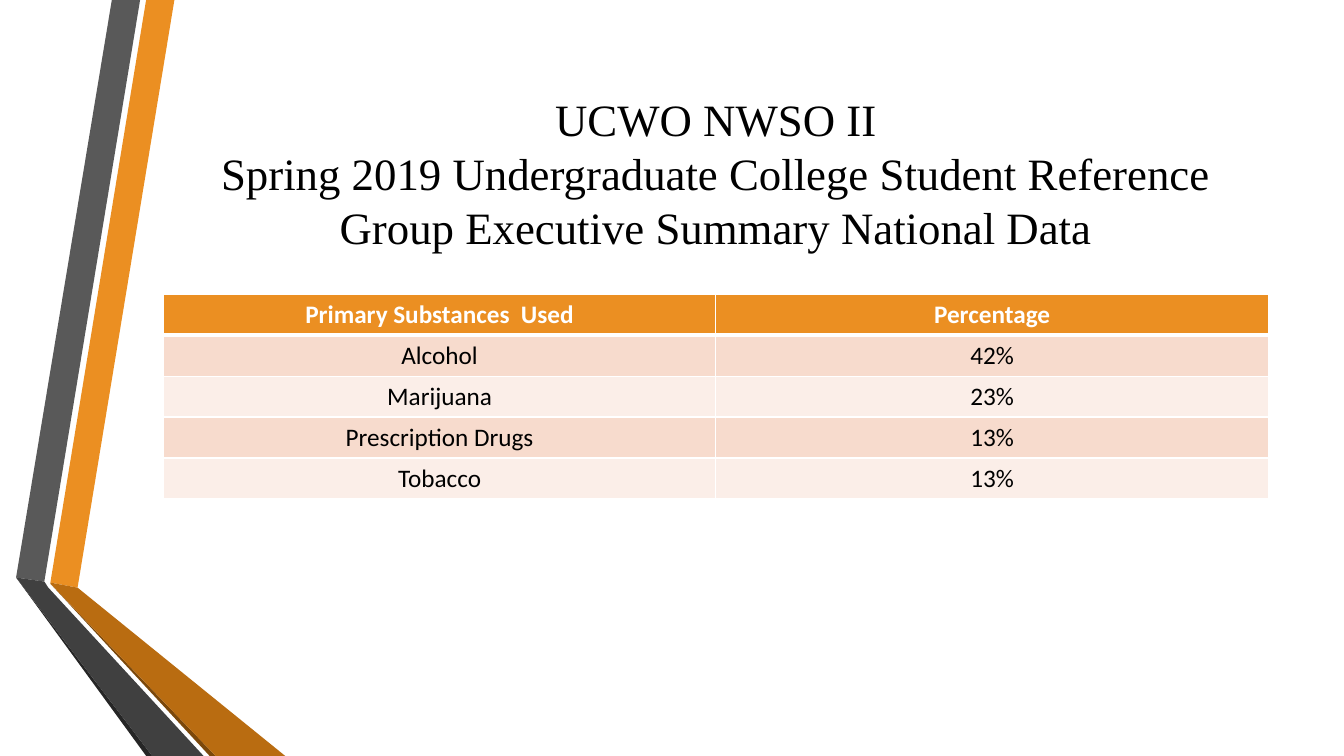
import dataclasses

import pptx
import pptx.dml.color
import pptx.enum.text
import pptx.oxml
import pptx.oxml.ns
import pptx.util

Inches = pptx.util.Inches
Pt = pptx.util.Pt


@dataclasses.dataclass(frozen=True)
class Theme:
    title_font: str = "Times New Roman"
    body_font: str = "Calibri"
    title_size: int = 32
    body_size: int = 18
    text: str = "000000"
    white: str = "FFFFFF"
    orange: str = "EB8F22"
    dark_orange: str = "B96C11"
    brown: str = "7B480B"
    gray: str = "595959"
    dark_gray: str = "404040"
    charcoal: str = "262626"
    bands: tuple = ("F7DBCD", "FBEEE8")


def rgb(value):
    return pptx.dml.color.RGBColor.from_string(value)


class SlideBuilder:
    def __init__(self, deck, theme):
        self.theme = theme
        self.page = deck.slides.add_slide(deck.slide_layouts[5])

    def add_span(self, para, text, font, size, color, bold=False):
        span = para.add_run()
        span.text = text
        span.font.name = font
        span.font.size = Pt(size)
        span.font.bold = bold
        span.font.color.rgb = rgb(color)

    def add_title(self, lines, left, top, width, height):
        box = self.page.shapes.title
        box.left, box.top = Inches(left), Inches(top)
        box.width, box.height = Inches(width), Inches(height)
        frame = box.text_frame
        frame.word_wrap = True
        frame.auto_size = pptx.enum.text.MSO_AUTO_SIZE.NONE
        frame.vertical_anchor = pptx.enum.text.MSO_ANCHOR.MIDDLE
        para = frame.paragraphs[0]
        para.alignment = pptx.enum.text.PP_ALIGN.CENTER
        para.line_spacing = 1.0
        for index, line in enumerate(lines):
            if index:
                para.add_line_break()
            self.add_span(para, line, self.theme.title_font,
                          self.theme.title_size, self.theme.text)

    def add_ribbon(self, color, points):
        """Draw a closed, filled polygon through points given in inches."""
        corners = [(Inches(x), Inches(y)) for x, y in points]
        outline = self.page.shapes.build_freeform(*corners[0])
        outline.add_line_segments(corners[1:], close=True)
        ribbon = outline.convert_to_shape()
        ribbon.shadow.inherit = False
        ribbon.fill.solid()
        ribbon.fill.fore_color.rgb = rgb(color)
        ribbon.line.fill.background()

    def add_border(self, cell, side, points):
        namespace = pptx.oxml.ns.nsdecls("a")
        border = pptx.oxml.parse_xml(
            f'<a:{side} {namespace} w="{Pt(points)}"><a:solidFill>'
            f'<a:srgbClr val="{self.theme.white}"/></a:solidFill></a:{side}>')
        cell._tc.get_or_add_tcPr().append(border)

    def add_cell(self, cell, text, row):
        header = row == 0
        top = 3 if row == 1 else 1
        bottom = 3 if header else 1
        for side, points in (("lnL", 1), ("lnR", 1), ("lnT", top), ("lnB", bottom)):
            self.add_border(cell, side, points)
        theme = self.theme
        cell.fill.solid()
        cell.fill.fore_color.rgb = rgb(theme.orange if header else theme.bands[(row - 1) % 2])
        para = cell.text_frame.paragraphs[0]
        para.alignment = pptx.enum.text.PP_ALIGN.CENTER
        self.add_span(para, text, theme.body_font, theme.body_size,
                      theme.white if header else theme.text, header)

    def add_table(self, rows, left, top, width, height):
        table = self.page.shapes.add_table(
            len(rows), len(rows[0]), Inches(left), Inches(top),
            Inches(width), Inches(height)).table
        for row, texts in enumerate(rows):
            for column, text in enumerate(texts):
                self.add_cell(table.cell(row, column), text, row)


def main():
    deck = pptx.Presentation()
    deck.slide_width, deck.slide_height = Inches(13.33), Inches(7.5)
    theme = Theme()
    builder = SlideBuilder(deck, theme)

    ribbons = [
        (theme.orange, [(0.5, 5.78), (0.77, 5.83), (1.73, 0), (1.45, 0)]),
        (theme.gray, [(1.39, 0), (1.11, 0), (0.16, 5.73), (0.44, 5.77)]),
        (theme.charcoal, [(0.16, 5.73), (1.45, 7.5), (1.51, 7.5)]),
        (theme.brown, [(0.5, 5.79), (2.08, 7.5), (2.14, 7.5)]),
        (theme.dark_orange, [(0.5, 5.79), (2.14, 7.5), (2.83, 7.5), (0.77, 5.83), (0.5, 5.78)]),
        (theme.dark_gray, [(2.02, 7.5), (0.48, 5.83), (0.44, 5.77), (0.16, 5.73), (1.51, 7.5)]),
    ]
    for color, points in ribbons:
        builder.add_ribbon(color, points)

    builder.add_title(
        ["UCWO NWSO II",
         "Spring 2019 Undergraduate College Student Reference "
         "Group Executive Summary National Data"],
        1.62, 0.75, 10.96, 1.92)
    builder.add_table(
        [("Primary Substances  Used", "Percentage"),
         ("Alcohol", "42%"),
         ("Marijuana", "23%"),
         ("Prescription Drugs", "13%"),
         ("Tobacco", "13%")],
        1.62, 2.92, 10.96, 2.03)
    deck.save("out.pptx")


if __name__ == "__main__":
    main()
